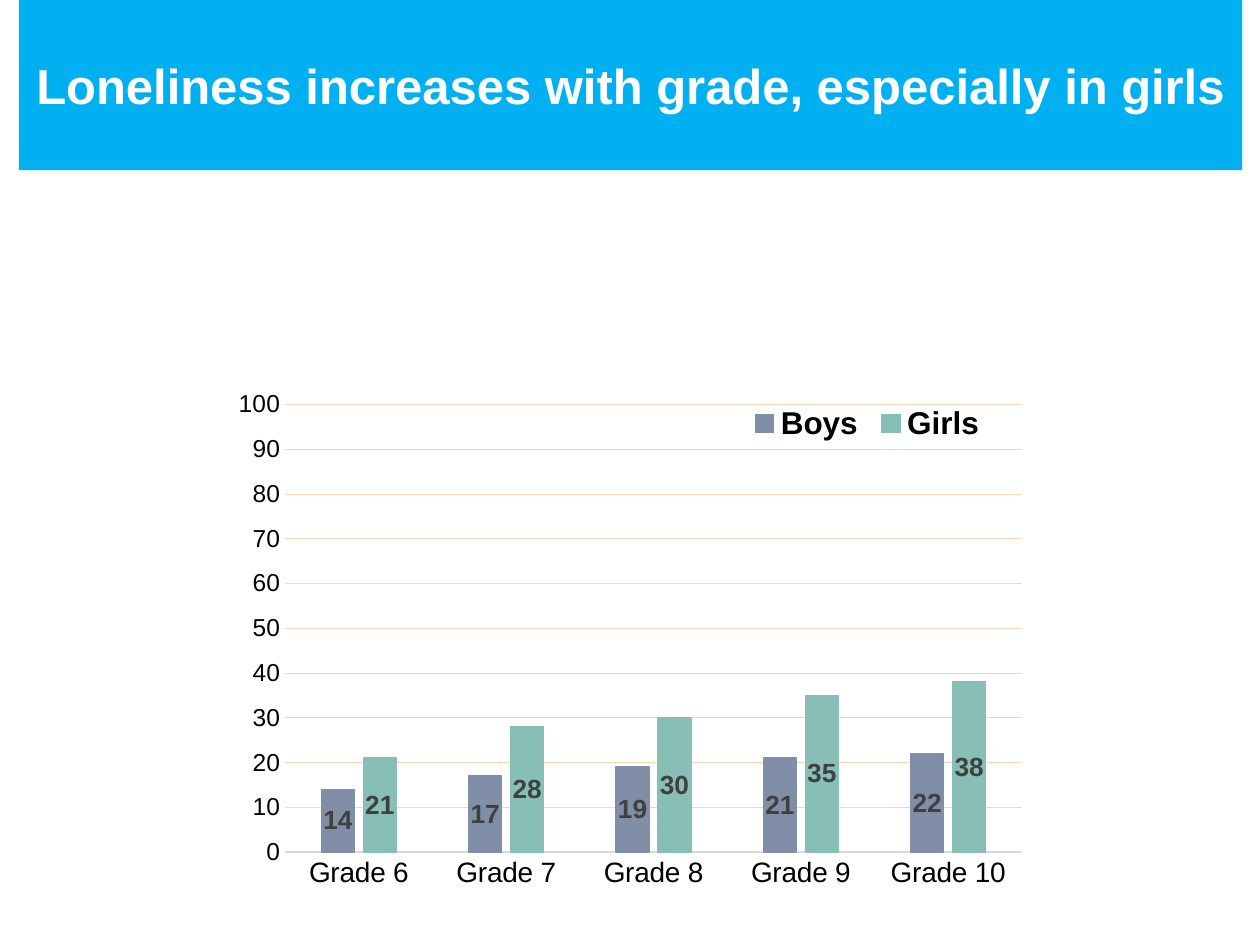
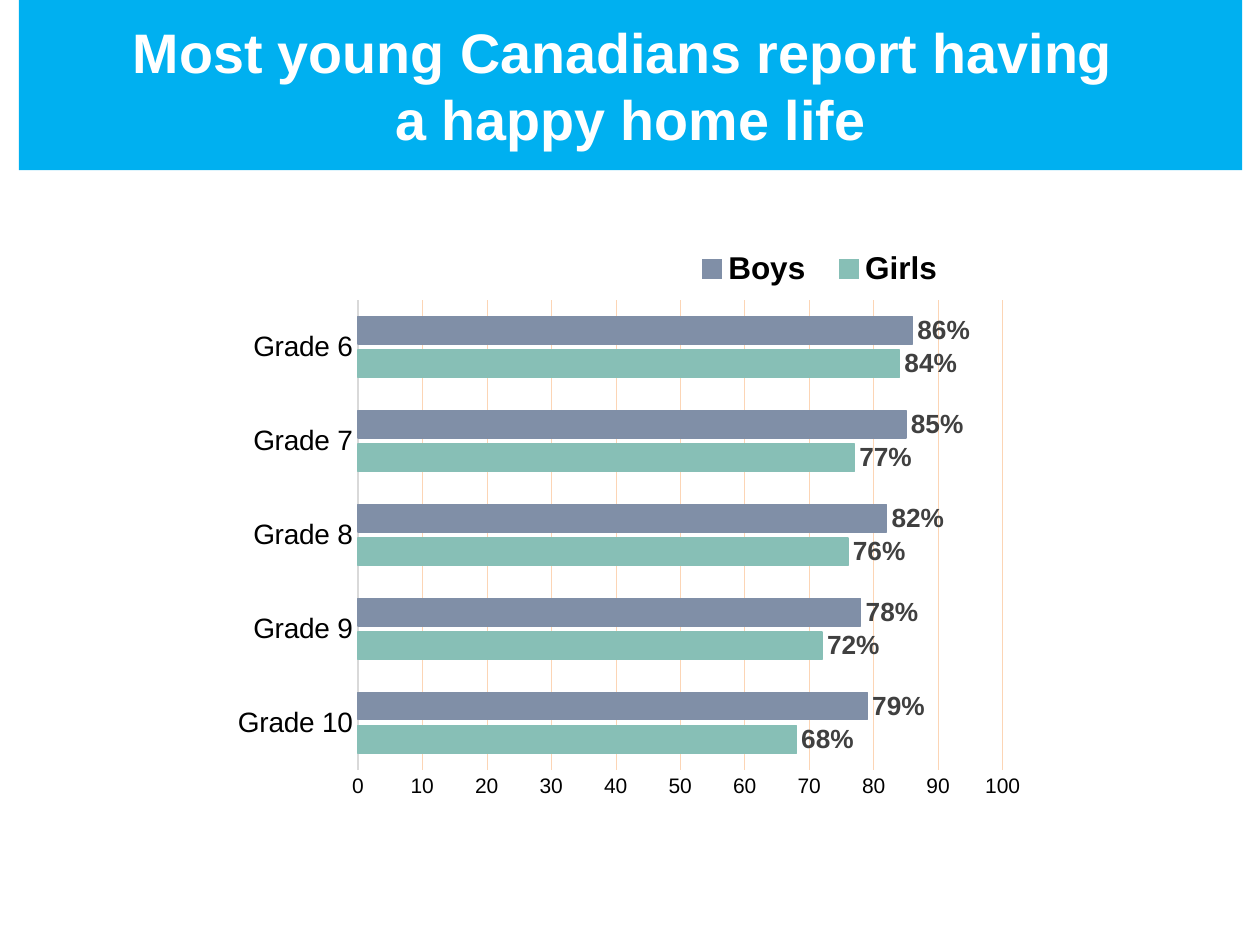
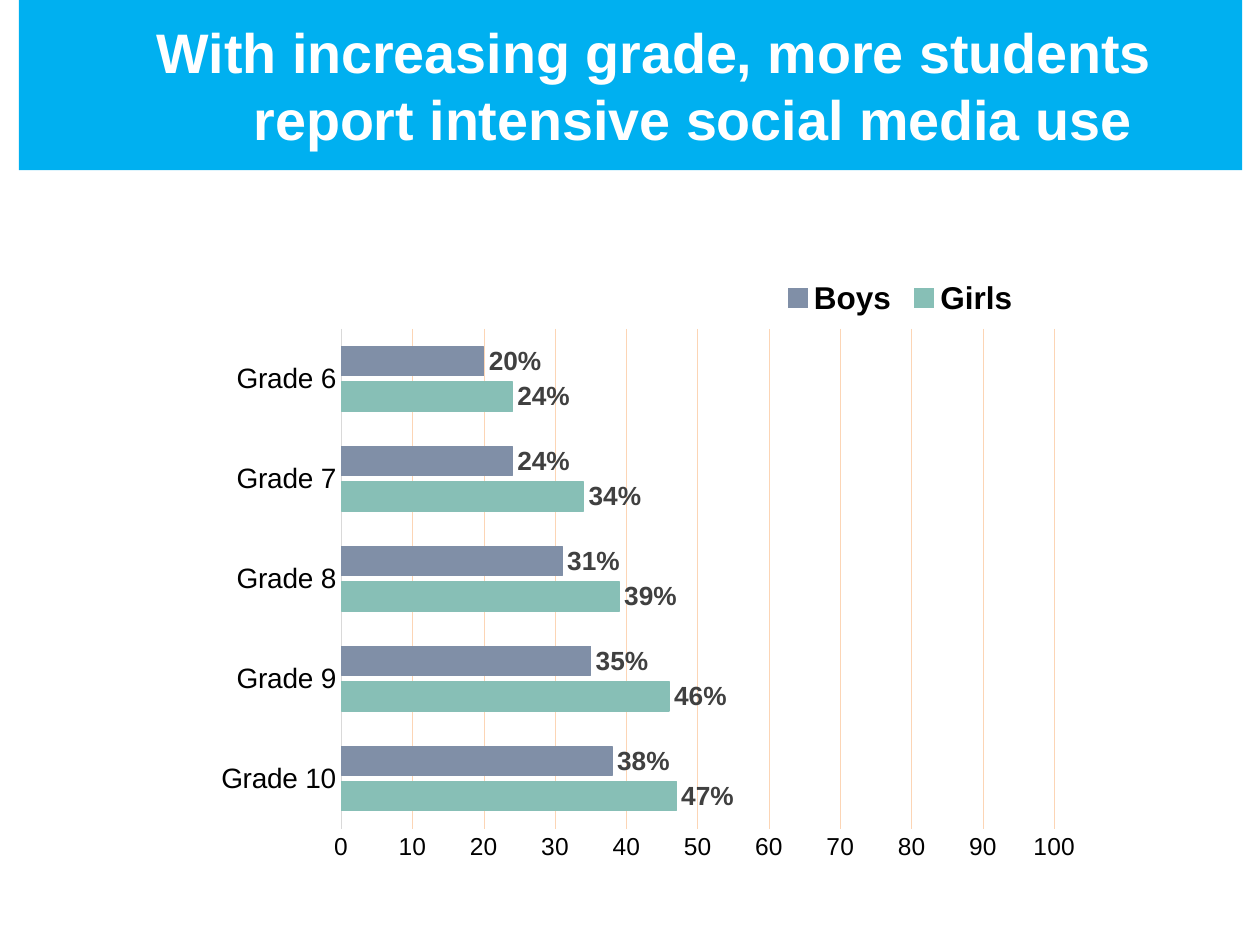
import pptx
import pptx.chart.data
import pptx.dml.color
import pptx.enum.chart
import pptx.enum.shapes
import pptx.enum.text
import pptx.oxml
import pptx.oxml.ns
import pptx.util

Pt = pptx.util.Pt
XL = pptx.enum.chart

COLORS = {
    "band": "00B0F0",
    "title": "FFFFFF",
    "text": "000000",
    "label": "404040",
    "axis": "D9D9D9",
    "grid": "FCD5B5",
    "Boys": "808FA7",
    "Girls": "87BFB6",
}
GRADES = [f"Grade {n}" for n in range(6, 11)]
FONT = "Arial"


def rgb(name):
    return pptx.dml.color.RGBColor.from_string(COLORS[name])


class Deck:
    def __init__(self):
        self.prs = pptx.Presentation()
        self.prs.slide_width, self.prs.slide_height = Pt(720), Pt(540)

    def slide(self):
        self.s = self.prs.slides.add_slide(self.prs.slide_layouts[6])

    def font(self, f, size, color="text", bold=False, name=FONT):
        f.name, f.size, f.bold = name, Pt(size), bold
        f.color.rgb = rgb(color)

    def line(self, fmt, color, width):
        fmt.line.color.rgb = rgb(color)
        fmt.line.width = Pt(width)

    def title(self, lines, size, indents=(0, 0)):
        sp = self.s.shapes.add_shape(
            pptx.enum.shapes.MSO_SHAPE.RECTANGLE, Pt(10.8), 0, Pt(699), Pt(97.2))
        sp.shadow.inherit = False
        sp.fill.solid()
        sp.fill.fore_color.rgb = rgb("band")
        sp.line.fill.background()
        tf = sp.text_frame
        tf.word_wrap = False
        tf.vertical_anchor = pptx.enum.text.MSO_ANCHOR.MIDDLE
        for i, (text, indent) in enumerate(zip(lines, indents)):
            p = tf.add_paragraph() if i else tf.paragraphs[0]
            p.text = text
            p.alignment = pptx.enum.text.PP_ALIGN.CENTER
            self.font(p.font, size, "title", True)
            if indent:
                p._p.get_or_add_pPr().set("marL", str(Pt(indent)))

    def layout(self, parent, index, box, frame, inner=False):
        for old in parent.findall(pptx.oxml.ns.qn("c:layout")):
            parent.remove(old)
        x, y, w, h = box
        left, top, width, height = frame
        values = {"x": (x - left) / width, "y": (y - top) / height,
                  "w": w / width, "h": h / height}
        target = '<c:layoutTarget val="inner"/>' if inner else ""
        modes = "".join(f'<c:{k}Mode val="edge"/>' for k in "xy")
        sizes = "".join(f'<c:{k} val="{v:.4f}"/>' for k, v in values.items())
        parent.insert(index, pptx.oxml.parse_xml(
            f'<c:layout {pptx.oxml.ns.nsdecls("c")}><c:manualLayout>'
            f"{target}{modes}{sizes}</c:manualLayout></c:layout>"))

    def chart(self, frame, plot_box, legend_box, boys, girls, tick_size, horizontal=True):
        step = -1 if horizontal else 1
        data = pptx.chart.data.CategoryChartData()
        data.categories = GRADES[::step]
        for name, values in [("Boys", boys), ("Girls", girls)][::step]:
            data.add_series(name, values[::step])
        kind = XL.XL_CHART_TYPE
        chart = self.s.shapes.add_chart(
            kind.BAR_CLUSTERED if horizontal else kind.COLUMN_CLUSTERED,
            *map(Pt, frame), data).chart
        chart.has_title = False
        self.font(chart.font, 10, name="Calibri")
        self.axes(chart, tick_size)
        self.bars(chart.plots[0], horizontal)
        chart.has_legend = True
        legend = chart.legend
        legend.position = XL.XL_LEGEND_POSITION.TOP
        legend.include_in_layout = False
        self.font(legend.font, 18, bold=True)
        self.layout(legend._element, 1, legend_box, frame)
        self.layout(chart._chartSpace.chart.plotArea, 0, plot_box, frame, True)

    def axes(self, chart, tick_size):
        cat, val = chart.category_axis, chart.value_axis
        for axis, size in ((cat, 16), (val, tick_size)):
            axis.major_tick_mark = axis.minor_tick_mark = XL.XL_TICK_MARK.NONE
            self.font(axis.tick_labels.font, size)
        self.line(cat.format, "axis", 0.75)
        val.format.line.fill.background()
        val.minimum_scale, val.maximum_scale, val.major_unit = 0, 100, 10
        val.has_major_gridlines = True
        self.line(val.major_gridlines.format, "grid", 0.25)

    def bars(self, plot, horizontal):
        plot.gap_width, plot.overlap = (122, -22) if horizontal else (219, -27)
        plot.vary_by_categories = False
        pos = XL.XL_LABEL_POSITION
        for series in plot.series:
            series.format.fill.solid()
            series.format.fill.fore_color.rgb = rgb(series.name)
            self.line(series.format, series.name, 0.75)
            labels = series.data_labels
            labels.show_value = True
            labels.position = pos.OUTSIDE_END if horizontal else pos.CENTER
            if horizontal:
                labels.number_format = '#"%"'
                labels.number_format_is_linked = False
            self.font(labels.font, 15, "label", True)


def main():
    d = Deck()

    d.slide()
    d.title(["Loneliness increases with grade, especially in girls"], 28)
    d.chart((126.7, 183.6, 465.8, 329.8), (163, 231, 421, 256), (424, 230, 143, 24),
            [14, 17, 19, 21, 22], [21, 28, 30, 35, 38], 14, horizontal=False)

    d.slide()
    d.title(["Most young Canadians report having ", "a happy home life"], 31.8)
    d.chart((126.7, 132.5, 465.8, 329.8), (204.5, 171.5, 368.5, 268.5), (388, 142, 161, 23),
            [86, 85, 82, 78, 79], [84, 77, 76, 72, 68], 12)

    d.slide()
    d.title(["With increasing grade, more students ", "report intensive social media use"],
            31.8, (36, 71))
    d.chart((116.6, 148.3, 508.3, 351.4), (195, 188, 407.5, 285.5), (443, 159, 143, 23),
            [20, 24, 31, 35, 38], [24, 34, 39, 46, 47], 14)

    d.prs.save("out.pptx")


if __name__ == "__main__":
    main()
